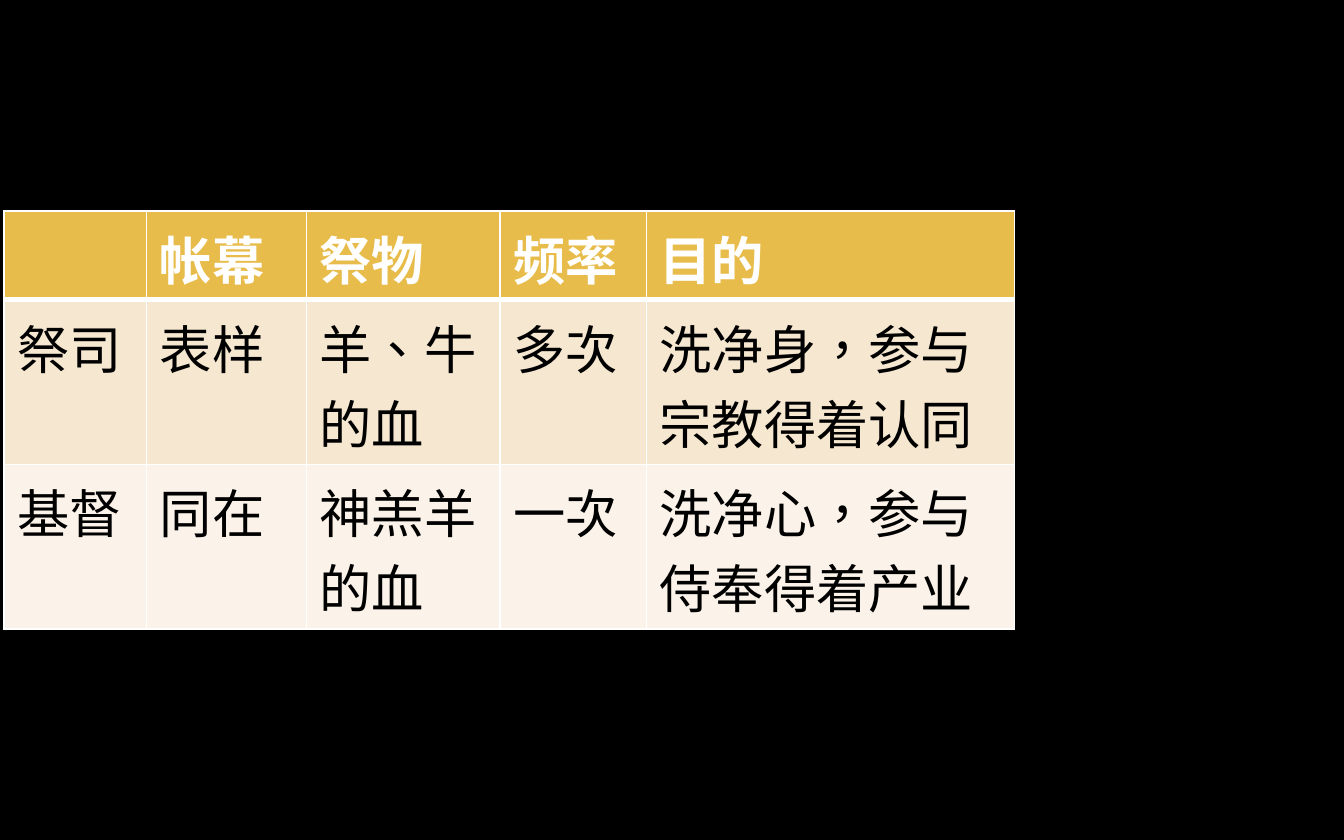
from dataclasses import dataclass

from lxml.etree import SubElement as Sub
from pptx import Presentation
from pptx.dml.color import RGBColor as Color
from pptx.oxml.ns import qn
from pptx.util import Inches, Pt


@dataclass(frozen=True)
class Theme:
    font: str = "Cabin"
    size: int = 28
    spacing: float = 1.19
    language: str = "zh-TW"
    backdrop: str = "000000"
    rule: str = "FFFFFF"
    fills: tuple = ("E8BC4A", "F6E7D0", "FBF3E9")
    inks: tuple = ("FFFFFF", "000000", "000000")


def add_border(cell, side, width):
    line = Sub(cell._tc.get_or_add_tcPr(), qn(f"a:{side}"), w=str(Pt(width)))
    Sub(Sub(line, qn("a:solidFill")), qn("a:srgbClr"), val=theme.rule)


theme = Theme()
columns = [1.06, 1.19, 1.44, 1.09, 2.74]
rows = [0.42, 1.04, 1.04]
content = [
    ["", "帐幕", "祭物", "频率", "目的"],
    ["祭司", "表样", "羊、牛的血", "多次", "洗净身，参与宗教得着认同"],
    ["基督", "同在", "神羔羊的血", "一次", "洗净心，参与侍奉得着产业"],
]

deck = Presentation()
deck.slide_width, deck.slide_height = Inches(10), Inches(6.25)
page = deck.slides.add_slide(deck.slide_layouts[6])
page.background.fill.solid()
page.background.fill.fore_color.rgb = Color.from_string(theme.backdrop)

table = page.shapes.add_table(
    len(rows), len(columns), Inches(0.03), Inches(1.57),
    Inches(sum(columns)), Inches(sum(rows)),
).table
for column, width in zip(table.columns, columns):
    column.width = Inches(width)
for row, height in zip(table.rows, rows):
    row.height = Inches(height)

for row_index, labels in enumerate(content):
    for column_index, label in enumerate(labels):
        cell = table.cell(row_index, column_index)
        for side in ("lnL", "lnR", "lnT", "lnB"):
            header_rule = (row_index, side) in ((0, "lnB"), (1, "lnT"))
            add_border(cell, side, 3 if header_rule else 1)
        cell.fill.solid()
        cell.fill.fore_color.rgb = Color.from_string(theme.fills[row_index])
        para = cell.text_frame.paragraphs[0]
        para.text = label
        para.line_spacing = theme.spacing
        para.font.size = Pt(theme.size)
        for span in para.runs:
            span.font.size = Pt(theme.size)
            span.font.bold = row_index == 0
            span.font.color.rgb = Color.from_string(theme.inks[row_index])
            span.font.name = theme.font
            properties = span._r.get_or_add_rPr()
            properties.set("lang", theme.language)
            Sub(properties, qn("a:ea"), typeface=theme.font)

deck.save("out.pptx")
